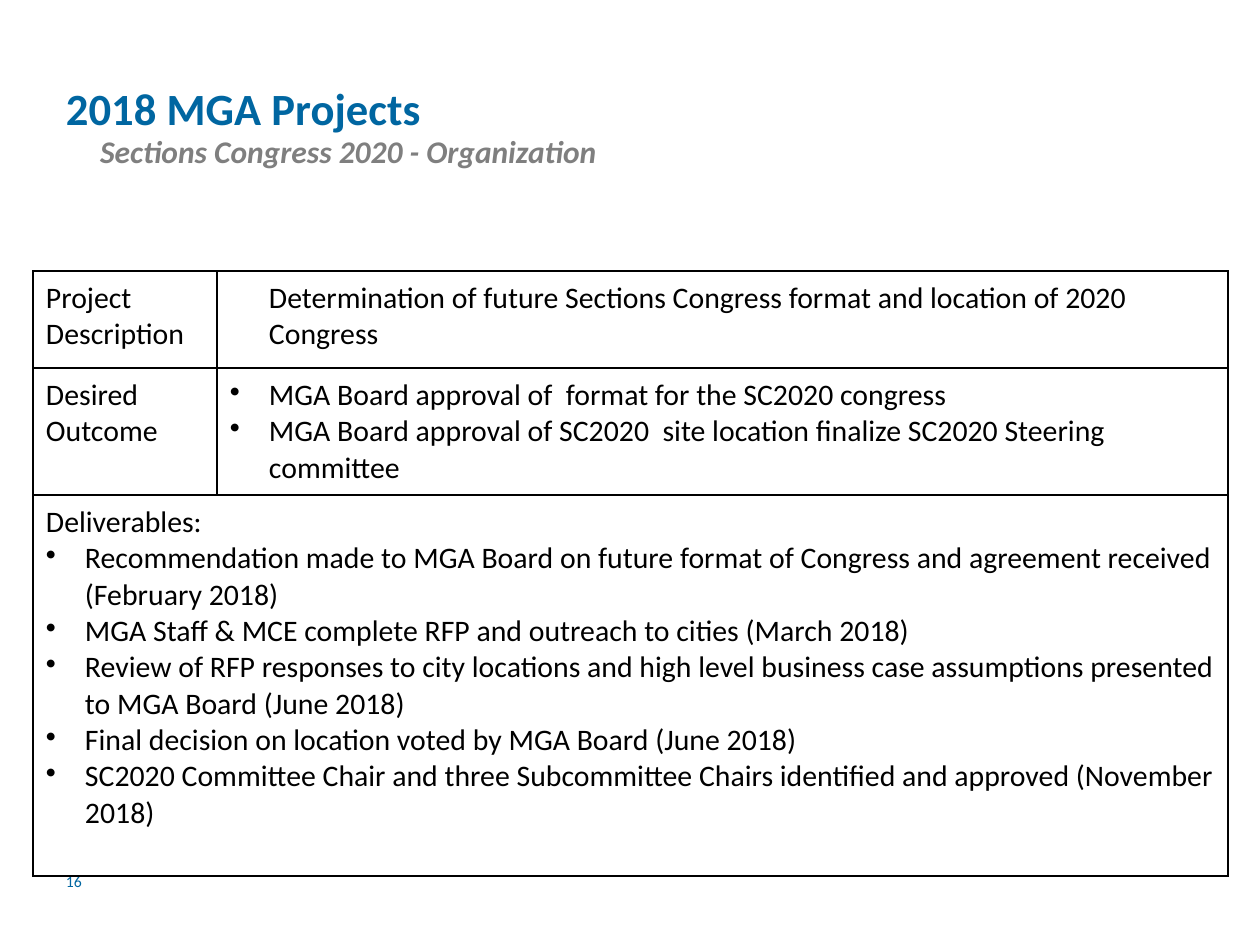
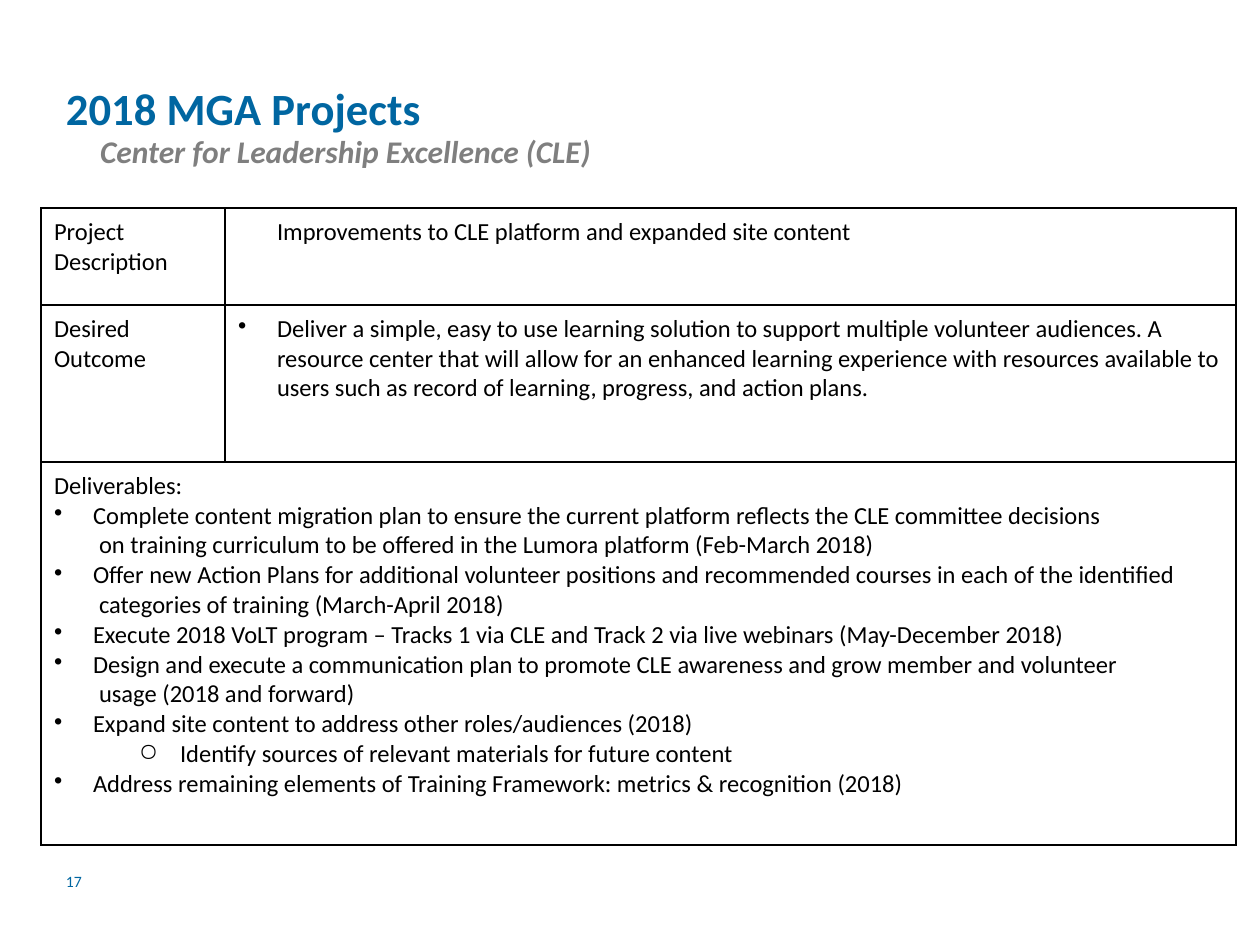
from lxml import etree
from pptx import Presentation
from pptx.dml.color import RGBColor
from pptx.enum.text import MSO_ANCHOR, MSO_AUTO_SIZE, PP_ALIGN
from pptx.oxml.ns import qn
from pptx.util import Emu, Pt

LEFT = PP_ALIGN.LEFT
TOP, MIDDLE, BOTTOM = MSO_ANCHOR.TOP, MSO_ANCHOR.MIDDLE, MSO_ANCHOR.BOTTOM
NO_AUTOFIT = MSO_AUTO_SIZE.NONE

EMU_PER_PX = 914400 / 126
FONT = "Calibri"
BLUE, GRAY, BLACK = "0066A1", "7F7F7F", "000000"
COLUMN_WIDTHS = (184, 1011)
MARGIN_X, MARGIN_Y, CELL_MARGIN_Y = 13, 6, 9

# Each paragraph style: left margin, first-line indent, bullet, level
STYLES = {
    "plain": (0, 0, None, 0),
    "indented": (39, 0, None, 0),
    "bullet": (39, -39, "•", 0),
    "continued": (45, 0, None, 0),
    "sub": (126, -41, "○", 1),
}

PROJECTS = [
    {
        "number": 16,
        "subtitle": "Sections Congress 2020 - Organization",
        "origin": (33, 271),
        "rows": (97, 126, 381),
        "size": 17,
        "description": "Determination of future Sections Congress format and location of 2020 Congress",
        "outcomes": [
            "MGA Board approval of  format for the SC2020 congress",
            "MGA Board approval of SC2020  site location finalize SC2020 Steering committee",
        ],
        "deliverables": [
            ("bullet", "Recommendation made to MGA Board on future format of Congress and agreement received (February 2018)"),
            ("bullet", "MGA Staff & MCE complete RFP and outreach to cities (March 2018)"),
            ("bullet", "Review of RFP responses to city locations and high level business case assumptions presented to MGA Board (June 2018)"),
            ("bullet", "Final decision on location voted by MGA Board (June 2018)"),
            ("bullet", "SC2020 Committee Chair and three Subcommittee Chairs identified and approved (November 2018)"),
        ],
    },
    {
        "number": 17,
        "subtitle": "Center for Leadership Excellence (CLE)",
        "origin": (41, 208),
        "rows": (97, 157, 383),
        "size": 14,
        "description": "Improvements to CLE platform and expanded site content",
        "outcomes": [
            "Deliver a simple, easy to use learning solution to support multiple volunteer audiences. "
            "A resource center that will allow for an enhanced learning experience with resources "
            "available to users such as record of learning, progress, and action plans.",
        ],
        "deliverables": [
            ("bullet", "Complete content migration plan to ensure the current platform reflects the CLE committee decisions"),
            ("continued", "on training curriculum to be offered in the Lumora platform (Feb-March 2018)"),
            ("bullet", "Offer new Action Plans for additional volunteer positions and recommended courses in each of the identified"),
            ("continued", "categories of training (March-April 2018)"),
            ("bullet", "Execute 2018 VoLT program – Tracks 1 via CLE and Track 2 via live webinars (May-December 2018)"),
            ("bullet", "Design and execute a communication plan to promote CLE awareness and grow member and volunteer"),
            ("continued", "usage (2018 and forward)"),
            ("bullet", "Expand site content to address other roles/audiences (2018)"),
            ("sub", "Identify sources of relevant materials for future content"),
            ("bullet", "Address remaining elements of Training Framework: metrics & recognition (2018)"),
        ],
    },
]


def px(length):
    """Turn pixels into EMU."""
    return Emu(round(length * EMU_PER_PX))


def rgb(color):
    """Turn a hex string into a colour."""
    return RGBColor.from_string(color)


def write(paragraph, text, size, color=BLACK, bold=False, italic=False, spacing=1.0, style="plain"):
    """Fill a paragraph with formatted text."""
    margin, indent, bullet, level = STYLES[style]
    properties = paragraph._p.get_or_add_pPr()
    properties.set("marL", str(px(margin)))
    properties.set("indent", str(px(indent)))
    if bullet:
        etree.SubElement(properties, qn("a:buChar"), char=bullet)
    else:
        etree.SubElement(properties, qn("a:buNone"))
    paragraph.level = level
    paragraph.alignment = LEFT
    paragraph.line_spacing = spacing
    paragraph.space_before = Pt(0)
    run = paragraph.add_run()
    run.text = text
    run.font.name = FONT
    run.font.size = Pt(size)
    run.font.color.rgb = rgb(color)
    run.font.bold = bold
    run.font.italic = italic


def write_box(box, area, text, anchor, **text_format):
    """Place a text shape and write its single line."""
    box.left, box.top, box.width, box.height = map(px, area)
    frame = box.text_frame
    frame.word_wrap = True
    frame.auto_size = NO_AUTOFIT
    frame.vertical_anchor = anchor
    frame.margin_left = frame.margin_right = px(MARGIN_X)
    frame.margin_top = frame.margin_bottom = px(MARGIN_Y)
    write(frame.paragraphs[0], text, **text_format)


def outline_cell(cell):
    """Give a cell thin black borders and no fill."""
    properties = cell._tc.get_or_add_tcPr()
    for side in ("lnL", "lnR", "lnT", "lnB"):
        border = etree.SubElement(properties, qn(f"a:{side}"), w=str(Pt(1)))
        fill = etree.SubElement(border, qn("a:solidFill"))
        etree.SubElement(fill, qn("a:srgbClr"), val=BLACK)
    cell.fill.background()


def fill_cell(cell, entries, size):
    """Write styled paragraphs into a table cell."""
    cell.margin_left = cell.margin_right = px(MARGIN_X)
    cell.margin_top = cell.margin_bottom = px(CELL_MARGIN_Y)
    cell.vertical_anchor = TOP
    frame = cell.text_frame
    for index, (style, text) in enumerate(entries):
        paragraph = frame.add_paragraph() if index else frame.paragraphs[0]
        write(paragraph, text, size=size, style=style)


def add_project_table(slide, project):
    """Add the description, outcome and deliverables table."""
    heights = project["rows"]
    area = (*project["origin"], sum(COLUMN_WIDTHS), sum(heights))
    table = slide.shapes.add_table(len(heights), len(COLUMN_WIDTHS), *map(px, area)).table
    table.first_row = table.horz_banding = False
    for column, width in zip(table.columns, COLUMN_WIDTHS):
        column.width = px(width)
    for row, height in zip(table.rows, heights):
        row.height = px(height)
    for cell in table.iter_cells():
        outline_cell(cell)
    table.cell(2, 0).merge(table.cell(2, 1))
    contents = {
        (0, 0): [("plain", "Project Description")],
        (0, 1): [("indented", project["description"])],
        (1, 0): [("plain", "Desired Outcome")],
        (1, 1): [("bullet", outcome) for outcome in project["outcomes"]],
        (2, 0): [("plain", "Deliverables:"), *project["deliverables"]],
    }
    for position, entries in contents.items():
        fill_cell(table.cell(*position), entries, project["size"])


def add_project_slide(deck, project):
    """Add one project slide with heading, number and table."""
    slide = deck.slides.add_slide(deck.slide_layouts[1])
    title, subtitle = slide.placeholders
    write_box(title, (53, 64, 1086, 77), "2018 MGA Projects", BOTTOM,
              size=25.5, color=BLUE, bold=True, spacing=0.9)
    number_area = (53, 856, 67, 50)
    page_number = slide.shapes.add_textbox(*map(px, number_area))
    write_box(page_number, number_area, str(project["number"]), MIDDLE, size=9, color=BLUE)
    write_box(subtitle, (87, 136, 1086, 49), project["subtitle"], TOP,
              size=18, color=GRAY, bold=True, italic=True, spacing=0.7)
    add_project_table(slide, project)


def main():
    """Build and save the deck."""
    deck = Presentation()
    deck.slide_width, deck.slide_height = px(1260), px(945)
    for project in PROJECTS:
        add_project_slide(deck, project)
    deck.save("out.pptx")


if __name__ == "__main__":
    main()
